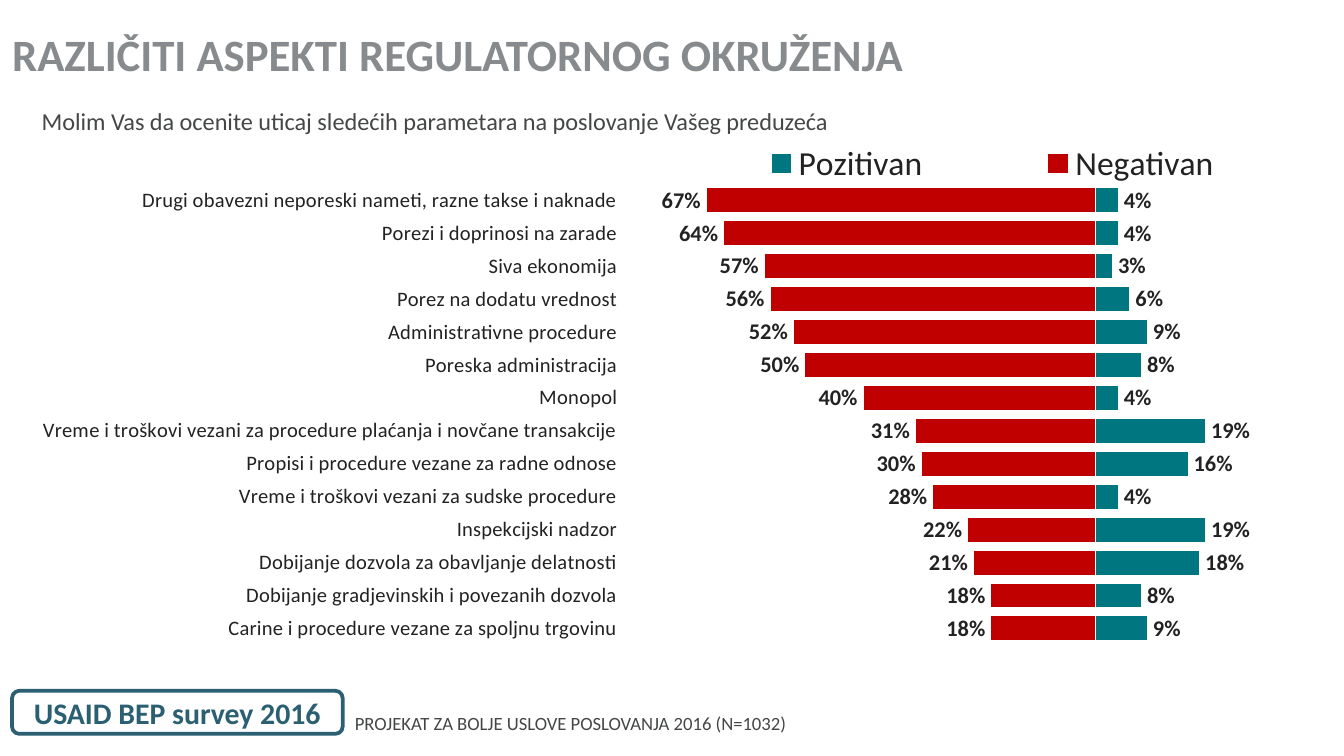
from lxml import etree
from pptx import Presentation
from pptx.chart.data import CategoryChartData
from pptx.dml.color import RGBColor
from pptx.enum.chart import (XL_CHART_TYPE, XL_LABEL_POSITION, XL_LEGEND_POSITION,
                             XL_TICK_LABEL_POSITION, XL_TICK_MARK)
from pptx.enum.shapes import MSO_SHAPE
from pptx.enum.text import MSO_ANCHOR, MSO_AUTO_SIZE, PP_ALIGN
from pptx.oxml.ns import qn
from pptx.util import Inches, Pt

BAR = XL_CHART_TYPE.BAR_CLUSTERED
OUTSIDE = XL_LABEL_POSITION.OUTSIDE_END
RIGHT = XL_LEGEND_POSITION.RIGHT
LOW = XL_TICK_LABEL_POSITION.LOW
TICK_OUT = XL_TICK_MARK.OUTSIDE
ROUNDED = MSO_SHAPE.ROUNDED_RECTANGLE
BOTTOM, MIDDLE = MSO_ANCHOR.BOTTOM, MSO_ANCHOR.MIDDLE
NO_FIT = MSO_AUTO_SIZE.NONE
LEFT, CENTER = PP_ALIGN.LEFT, PP_ALIGN.CENTER

FONT = "Calibri"
COLORS = {
    "title": "888B8D",
    "body": "444647",
    "chart": "222223",
    "negative": "C00000",
    "positive": "007681",
    "badge": "2B5F72",
    "white": "FFFFFF",
}
RATINGS = [
    ("Drugi obavezni neporeski nameti, razne takse i naknade", 67, 4),
    ("Porezi i doprinosi na zarade", 64, 4),
    ("Siva ekonomija", 57, 3),
    ("Porez na dodatu vrednost", 56, 6),
    ("Administrativne procedure", 52, 9),
    ("Poreska administracija", 50, 8),
    ("Monopol", 40, 4),
    ("Vreme i troškovi vezani za procedure plaćanja i novčane transakcije", 31, 19),
    ("Propisi i procedure vezane za radne odnose", 30, 16),
    ("Vreme i troškovi vezani za sudske procedure", 28, 4),
    ("Inspekcijski nadzor", 22, 19),
    ("Dobijanje dozvola za obavljanje delatnosti", 21, 18),
    ("Dobijanje gradjevinskih i povezanih dozvola", 18, 8),
    ("Carine i procedure vezane za spoljnu trgovinu", 18, 9),
]


def rgb(name):
    return RGBColor.from_string(COLORS[name])


def set_font(font, size, color, bold=False):
    font.name = FONT
    font.size = Pt(size)
    font.bold = bold
    font.color.rgb = rgb(color)


def place(sp, left, top, width, height):
    sp.left, sp.top = Inches(left), Inches(top)
    sp.width, sp.height = Inches(width), Inches(height)


def fill_placeholder(sp, box, text, size, color, anchor, bold=False, spacing=0.95):
    place(sp, *box)
    tf = sp.text_frame
    tf.margin_left = tf.margin_right = tf.margin_top = tf.margin_bottom = 0
    tf.word_wrap = True
    tf.auto_size = NO_FIT
    tf.vertical_anchor = anchor
    p = tf.paragraphs[0]
    p.alignment = LEFT
    p.line_spacing = spacing
    p.space_before = Pt(0)
    p.space_after = Pt(3)
    pPr = p._p.get_or_add_pPr()
    pPr.set("marL", "0")
    pPr.set("indent", "0")
    etree.SubElement(pPr, qn("a:buNone"))
    r = p.add_run()
    r.text = text
    set_font(r.font, size, color, bold)


def set_layout(parent, next_tag, x, y, w, h, inner=False):
    for old in parent.findall(qn("c:layout")):
        parent.remove(old)
    layout = etree.Element(qn("c:layout"))
    manual = etree.SubElement(layout, qn("c:manualLayout"))
    values = [("xMode", "edge"), ("yMode", "edge"), ("x", x), ("y", y), ("w", w), ("h", h)]
    if inner:
        values.insert(0, ("layoutTarget", "inner"))
    for tag, value in values:
        etree.SubElement(manual, qn(f"c:{tag}")).set("val", str(value))
    parent.find(qn(next_tag)).addprevious(layout)


def style_series(series, color, number_format):
    series.invert_if_negative = False
    series.format.fill.solid()
    series.format.fill.fore_color.rgb = rgb(color)
    series.format.line.color.rgb = rgb("white")
    series.format.line.width = Pt(0.75)
    labels = series.data_labels
    labels.show_value = True
    labels.position = OUTSIDE
    labels.number_format = number_format
    labels.number_format_is_linked = False
    set_font(labels.font, 12, "chart", True)


def add_rating_chart(slide):
    data = CategoryChartData()
    data.categories = [name for name, _, _ in RATINGS]
    data.add_series("Negativan", [-neg for _, neg, _ in RATINGS])
    data.add_series("Pozitivan", [pos for _, _, pos in RATINGS])
    chart = slide.shapes.add_chart(BAR, Inches(0.09), Inches(1.03),
                                   Inches(9.79), Inches(3.77), data).chart
    chart.has_title = False
    set_font(chart.font, 18, "chart")

    plot = chart.plots[0]
    plot.gap_width = 30
    plot.overlap = 100
    plot.vary_by_categories = False
    style_series(plot.series[0], "negative", '0;0"%"')
    style_series(plot.series[1], "positive", '#"%"')

    cat = chart.category_axis
    cat.reverse_order = True
    cat.tick_label_position = LOW
    cat.major_tick_mark = TICK_OUT
    cat.format.line.fill.background()
    set_font(cat.tick_labels.font, 11, "chart")
    val = chart.value_axis
    val.minimum_scale, val.maximum_scale = -80, 40
    val.has_major_gridlines = False
    val.visible = False

    chart.has_legend = True
    legend = chart.legend
    legend.position = RIGHT
    legend.include_in_layout = False
    set_font(legend.font, 18, "chart")
    set_layout(legend._element, "c:overlay", 0.49, 0.01, 0.51, 0.08)
    set_layout(chart._chartSpace.chart.plotArea, "c:barChart",
               0.47, 0.09, 0.53, 0.91, inner=True)


def add_badge(slide, text):
    sp = slide.shapes.add_shape(ROUNDED, Inches(0.09), Inches(5.14), Inches(2.46), Inches(0.32))
    sp.shadow.inherit = False
    sp.fill.solid()
    sp.fill.fore_color.rgb = rgb("white")
    sp.line.color.rgb = rgb("badge")
    sp.line.width = Pt(2)
    tf = sp.text_frame
    tf.word_wrap = True
    tf.vertical_anchor = MIDDLE
    p = tf.paragraphs[0]
    p.alignment = CENTER
    r = p.add_run()
    r.text = text
    set_font(r.font, 16, "badge", True)


def main():
    prs = Presentation()
    prs.slide_width, prs.slide_height = Inches(10), Inches(10 * 9 / 16)
    slide = prs.slides.add_slide(prs.slide_layouts[3])
    title, source, question = list(slide.placeholders)[:3]
    fill_placeholder(title, (0.09, 0.14, 9.79, 0.46),
                     "RAZLIČITI ASPEKTI REGULATORNOG OKRUŽENJA",
                     24, "title", BOTTOM, bold=True, spacing=1.0)
    fill_placeholder(source, (2.64, 5.12, 4.96, 0.35),
                     "PROJEKAT ZA BOLJE USLOVE POSLOVANJA 2016 (N=1032)", 10, "body", BOTTOM)
    fill_placeholder(question, (0.31, 0.81, 9.79, 0.2),
                     "Molim Vas da ocenite uticaj sledećih parametara na poslovanje Vašeg preduzeća",
                     13, "body", MIDDLE)
    add_rating_chart(slide)
    add_badge(slide, "USAID BEP survey 2016")
    prs.save("out.pptx")


if __name__ == "__main__":
    main()
